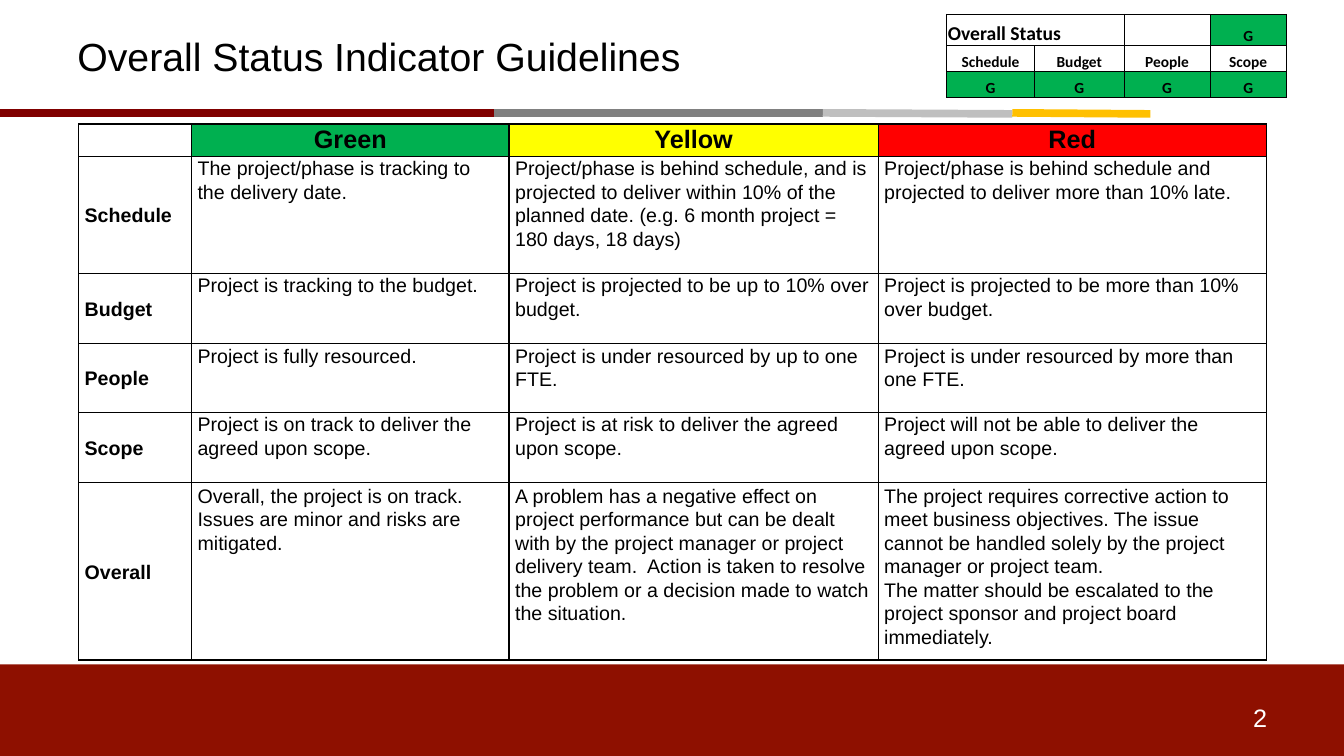
from lxml import etree
from pptx import Presentation
from pptx import util as u
from pptx.dml.color import RGBColor
from pptx.enum import shapes, text
from pptx.oxml import ns

BLACK = RGBColor(0x00, 0x00, 0x00)
WHITE = RGBColor(0xFF, 0xFF, 0xFF)
BRICK = RGBColor(0x8E, 0x10, 0x00)
MAROON = RGBColor(0x80, 0x00, 0x00)
GRAY = RGBColor(0x80, 0x80, 0x80)
SILVER = RGBColor(0xBF, 0xBF, 0xBF)
GOLD = RGBColor(0xFF, 0xC0, 0x00)
GREEN = RGBColor(0x00, 0xB0, 0x50)
YELLOW = RGBColor(0xFF, 0xFF, 0x00)
RED = RGBColor(0xFF, 0x00, 0x00)

LEFT, CENTER = text.PP_ALIGN.LEFT, text.PP_ALIGN.CENTER
TOP, MIDDLE, BOTTOM = text.MSO_ANCHOR.TOP, text.MSO_ANCHOR.MIDDLE, text.MSO_ANCHOR.BOTTOM

GUIDELINES = [
    ["", "Green", "Yellow", "Red"],
    ["Schedule",
     "The project/phase is tracking to the delivery date.",
     "Project/phase is behind schedule, and is projected to deliver within 10% of the "
     "planned date. (e.g. 6 month project = 180 days, 18 days)",
     "Project/phase is behind schedule and projected to deliver more than 10% late."],
    ["Budget",
     "Project is tracking to the budget.",
     "Project is projected to be up to 10% over budget.",
     "Project is projected to be more than 10% over budget."],
    ["People",
     "Project is fully resourced.",
     "Project is under resourced by up to one FTE.",
     "Project is under resourced by more than one FTE."],
    ["Scope",
     "Project is on track to deliver the agreed upon scope.",
     "Project is at risk to deliver the agreed upon scope.",
     "Project will not be able to deliver the agreed upon scope."],
    ["Overall",
     "Overall, the project is on track.  Issues are minor and risks are mitigated.",
     "A problem has a negative effect on project performance but can be dealt with by the "
     "project manager or project delivery team.  Action is taken to resolve the problem or "
     "a decision made to watch the situation.",
     "The project requires corrective action to meet business objectives. The issue cannot "
     "be handled solely by the project manager or project team.\n"
     "The matter should be escalated to the project sponsor and project board immediately."],
]
STATUS = [
    ["Overall Status", "", "", "G"],
    ["Schedule", "Budget", "People", "Scope"],
    ["G", "G", "G", "G"],
]


class StatusSlide:
    font = "Arial"

    def __init__(self, deck):
        self.deck = deck
        self.page = deck.slides.add_slide(deck.slide_layouts[6])

    def across(self, share):
        return round(self.deck.slide_width * share / 100)

    def down(self, share):
        return round(self.deck.slide_height * share / 100)

    def place(self, left, top, width, height):
        return self.across(left), self.down(top), self.across(width), self.down(height)

    def band(self, area, color):
        box = self.page.shapes.add_shape(shapes.MSO_SHAPE.RECTANGLE, *self.place(*area))
        box.shadow.inherit = False
        box.fill.solid()
        box.fill.fore_color.rgb = color
        box.line.fill.background()

    def line(self, start, end, color, points):
        line = self.page.shapes.add_connector(
            shapes.MSO_CONNECTOR.STRAIGHT, self.across(start[0]), self.down(start[1]),
            self.across(end[0]), self.down(end[1]))
        line.line.color.rgb = color
        line.line.width = u.Pt(points)
        etree.SubElement(line._element.spPr, ns.qn("a:effectLst"))

    def add_words(self, frame, words, size, color=BLACK, font=font, bold=False,
                  align=LEFT, spacing=None):
        for index, words_in_para in enumerate(words.split("\n")):
            para = frame.add_paragraph() if index else frame.paragraphs[0]
            para.alignment = align
            if spacing:
                para.line_spacing = spacing
            if not words_in_para:
                etree.SubElement(para._p, ns.qn("a:endParaRPr"), sz=str(size * 100))
                continue
            span = para.add_run()
            span.text = words_in_para
            span.font.name = font
            span.font.size = u.Pt(size)
            span.font.bold = bold
            span.font.color.rgb = color

    def label(self, area, words, size, color=BLACK, anchor=TOP):
        box = self.page.shapes.add_textbox(*self.place(*area))
        box.text_frame.word_wrap = True
        box.text_frame.vertical_anchor = anchor
        self.add_words(box.text_frame, words, size, color)

    def table(self, corner, columns, rows):
        area = self.place(*corner, sum(columns), sum(rows))
        table = self.page.shapes.add_table(len(rows), len(columns), *area).table
        table.first_row = table.horz_banding = False
        for column, width in zip(table.columns, columns):
            column.width = self.across(width)
        for row, height in zip(table.rows, rows):
            row.height = self.down(height)
        return table

    def cell(self, cell, words, size, border, side, top=0, fill=None, anchor=TOP, **style):
        cell.margin_left = cell.margin_right = self.across(side)
        cell.margin_top, cell.margin_bottom = self.down(top), 0
        cell.vertical_anchor = anchor
        for edge in ("lnL", "lnR", "lnT", "lnB"):
            line = etree.SubElement(cell._tc.get_or_add_tcPr(), ns.qn(f"a:{edge}"),
                                    w=str(u.Pt(border)))
            solid = etree.SubElement(line, ns.qn("a:solidFill"))
            etree.SubElement(solid, ns.qn("a:srgbClr"), val=str(BLACK))
        if fill is None:
            cell.fill.background()
        else:
            cell.fill.solid()
            cell.fill.fore_color.rgb = fill
        self.add_words(cell.text_frame, words, size, **style)

    def guidelines(self):
        table = self.table((5.85, 16.4), (8.4, 23.63, 27.46, 28.88),
                           (4, 15.47, 9.33, 9.07, 9.33, 15.47))
        heading_fills = (None, GREEN, YELLOW, RED)
        last = len(GUIDELINES) - 1
        for r, row in enumerate(GUIDELINES):
            for c, words in enumerate(row):
                heading = r == 0
                self.cell(table.cell(r, c), words, 18 if heading else 14, 1, 0.45,
                          top=0.13 if r == last else 0,
                          fill=heading_fills[c] if heading else None,
                          anchor=MIDDLE if c == 0 and not heading else TOP,
                          bold=heading or c == 0,
                          align=CENTER if heading else LEFT, spacing=1.07)

    def status(self):
        table = self.table((70.44, 1.87), (6.53, 6.68, 6.38, 5.7), (4.13, 3.47, 3.47))
        for r, row in enumerate(STATUS):
            for c, words in enumerate(row):
                title = r == c == 0
                self.cell(table.cell(r, c), words, 14 if title else 11, 0.5, 0.08,
                          top=0.13, fill=GREEN if words == "G" else None, anchor=BOTTOM,
                          font="Calibri", bold=True, align=LEFT if title else CENTER)
        table.cell(0, 0).merge(table.cell(0, 1))


def main():
    deck = Presentation()
    deck.slide_width, deck.slide_height = u.Inches(13.33), u.Inches(7.5)
    slide = StatusSlide(deck)
    slide.band((0, 87.87, 100, 12.13), BRICK)
    stops = (0, 36.76, 61.22, 75.32, 85.6)
    ends = (14.93, 14.93, 15.07, 15.07)
    for left, right, end, color in zip(stops, stops[1:], ends, (MAROON, GRAY, SILVER, GOLD)):
        slide.line((left, 14.93), (right, end), color, 5.5)
    slide.label((92.5, 92.27, 4.8, 5.33), "2", 18, WHITE)
    slide.label((5.03, 0.53, 90, 13.73), "Overall Status Indicator Guidelines", 28, anchor=MIDDLE)
    slide.guidelines()
    slide.status()
    deck.save("out.pptx")


if __name__ == "__main__":
    main()
